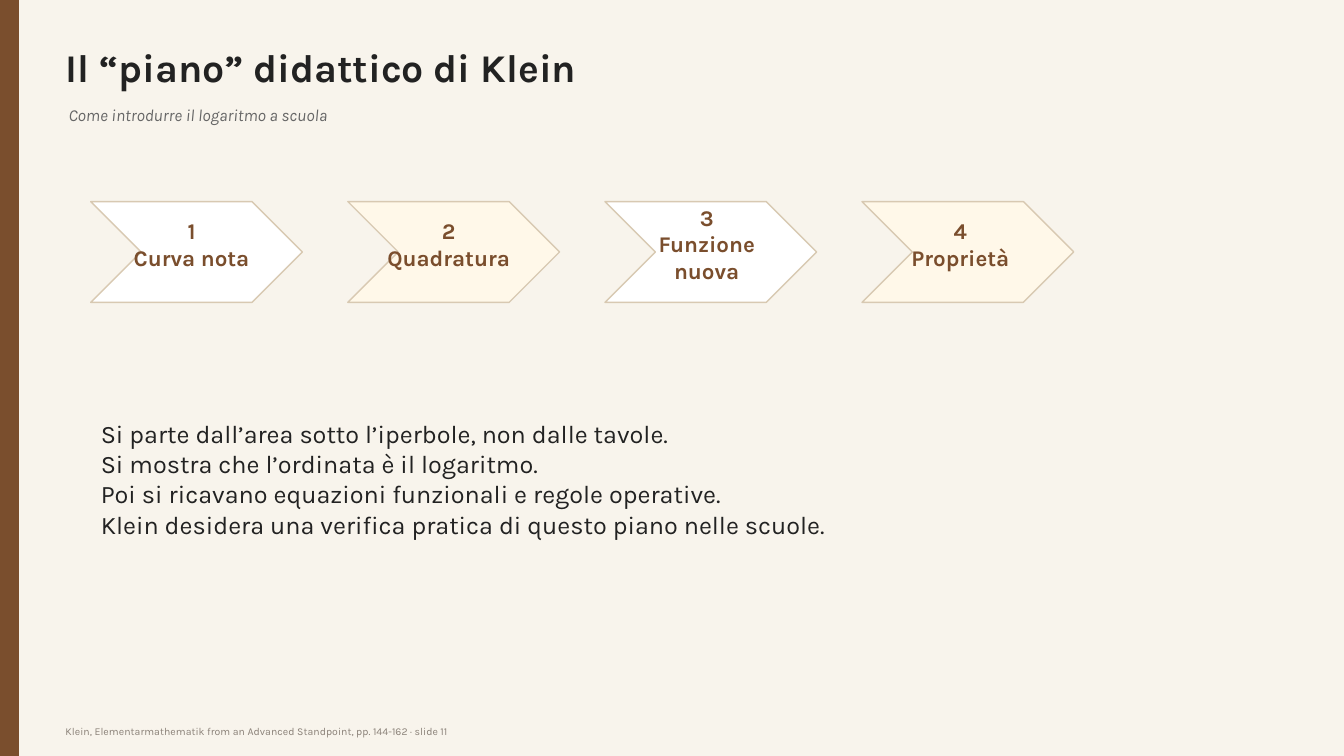
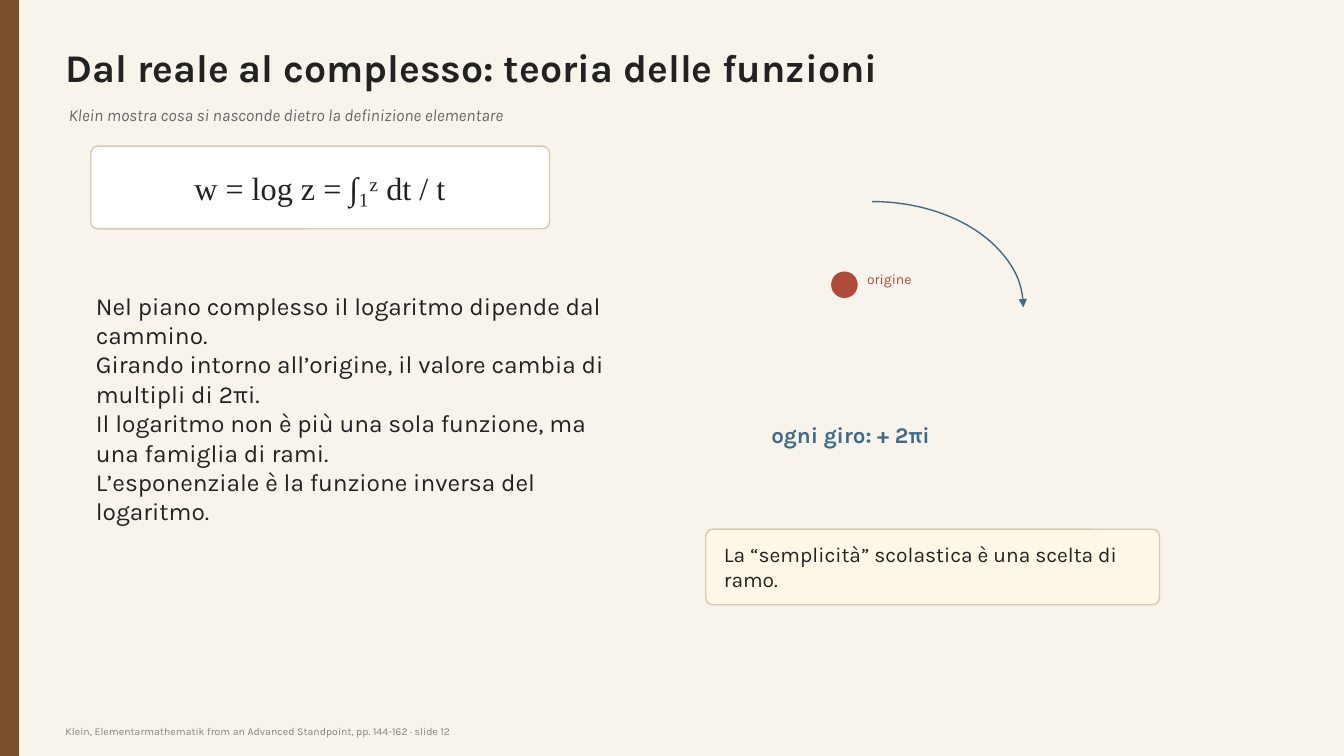
import pptx
import pptx.util
import pptx.dml.color
import pptx.enum.shapes
import pptx.enum.text
import pptx.oxml
import pptx.oxml.ns
from dataclasses import dataclass

SHAPE = pptx.enum.shapes.MSO_SHAPE
ALIGN = pptx.enum.text.PP_ALIGN


@dataclass(frozen=True)
class Theme:
    paper: str = "F8F4EC"
    brown: str = "7A4E2D"
    ink: str = "222222"
    grey: str = "666666"
    muted: str = "8A8178"
    white: str = "FFFFFF"
    cream: str = "FFF8E9"
    border: str = "D8C9B2"
    blue: str = "3E6B89"
    red: str = "B04A3A"
    font: str = "Karla"
    math_font: str = "Times New Roman"
    title: float = 28
    formula: float = 23
    body: float = 18
    body_dense: float = 17.5
    label: float = 16
    note: float = 15
    subtitle: float = 12
    small: float = 10
    footer: float = 7.5


T = Theme()
SLIDE_W, SLIDE_H = 1333, 750
BAND_W = 18
CARD_RADIUS = 7


def px(n):
    return pptx.util.Emu(round(n * 9144))


def rgb(color):
    return pptx.dml.color.RGBColor.from_string(color)


def write(sp, text, size=T.body, color=T.ink, font=T.font, bold=False,
          italic=False, align=ALIGN.LEFT, inset=0):
    tf = sp.text_frame
    tf.auto_size = pptx.enum.text.MSO_AUTO_SIZE.NONE
    tf.word_wrap = True
    tf.vertical_anchor = pptx.enum.text.MSO_ANCHOR.MIDDLE
    tf.margin_left = tf.margin_right = px(inset)
    tf.margin_top = tf.margin_bottom = 0
    for i, line in enumerate(text.split("\n")):
        p = tf.paragraphs[0] if i == 0 else tf.add_paragraph()
        p.alignment = align
        r = p.add_run()
        r.text = line
        r.font.name = font
        r.font.size = pptx.util.Pt(size)
        r.font.bold = bold
        r.font.italic = italic
        r.font.color.rgb = rgb(color)


def add_text(slide, box, text, **fmt):
    sp = slide.shapes.add_textbox(*map(px, box))
    write(sp, text, **fmt)
    return sp


def add_shape(slide, kind, box, fill, line):
    sp = slide.shapes.add_shape(kind, *map(px, box))
    sp.shadow.inherit = False
    if fill:
        sp.fill.solid()
        sp.fill.fore_color.rgb = rgb(fill)
    else:
        sp.fill.background()
    sp.line.color.rgb = rgb(line)
    sp.line.width = pptx.util.Pt(1)
    return sp


def add_card(slide, box, fill, text, **fmt):
    sp = add_shape(slide, SHAPE.ROUNDED_RECTANGLE, box, fill, T.border)
    sp.adjustments[0] = CARD_RADIUS / box[3] if box[3] < 80 else 0.085
    write(sp, text, **fmt)


def add_page(prs, number, title, subtitle):
    slide = prs.slides.add_slide(prs.slide_layouts[5])
    slide.background.fill.solid()
    slide.background.fill.fore_color.rgb = rgb(T.paper)
    add_shape(slide, SHAPE.RECTANGLE, (0, 0, BAND_W, SLIDE_H), T.brown, T.brown)
    sp = slide.shapes.title
    sp.left, sp.top, sp.width, sp.height = map(px, (65, 35, 1060, 62))
    write(sp, title, size=T.title, bold=True)
    add_text(slide, (68, 97, 1020, 33), subtitle,
             size=T.subtitle, color=T.grey, italic=True)
    add_text(slide, (65, 716, 950, 18),
             "Klein, Elementarmathematik from an Advanced Standpoint, "
             f"pp. 144-162 · slide {number}", size=T.footer, color=T.muted)
    return slide


def add_steps(slide, box, steps, gap=45):
    left, top, width, height = box
    step_w = (width - gap * (len(steps) - 1)) // len(steps)
    for i, (name, indent, label_w) in enumerate(steps):
        x = left + i * (step_w + gap)
        fill = T.cream if i % 2 else T.white
        add_shape(slide, SHAPE.CHEVRON, (x, top, step_w, height), fill, T.border)
        add_text(slide, (x + indent, top + 18, label_w, 48), f"{i + 1}\n{name}",
                 size=T.label, color=T.brown, bold=True, align=ALIGN.CENTER)


def add_branch_diagram(slide, box):
    left, top, width, height = box
    arc = add_shape(slide, SHAPE.ARC, box, None, T.blue)
    arc.line._get_or_add_ln().append(pptx.oxml.parse_xml(
        f'<a:tailEnd {pptx.oxml.ns.nsdecls("a")} type="triangle"/>'))
    add_shape(slide, SHAPE.OVAL, (left + 110, top + 70, 25, 25), T.red, T.red)
    add_text(slide, (left + 145, top + 67, 90, 20), "origine",
             size=T.small, color=T.red)
    add_text(slide, (left + 50, top + height + 5, 210, 32), "ogni giro: + 2πi",
             size=T.label, color=T.blue, bold=True)


def build_plan(prs):
    slide = add_page(prs, 11, "Il “piano” didattico di Klein",
                     "Come introdurre il logaritmo a scuola")
    add_steps(slide, (90, 200, 975, 100), [
        ("Curva nota", 25, 150),
        ("Quadratura", 25, 150),
        ("Funzione nuova", 21, 160),
        ("Proprietà", 30, 135),
    ])
    add_text(slide, (100, 400, 1050, 150),
             "Si parte dall’area sotto l’iperbole, non dalle tavole.\n"
             "Si mostra che l’ordinata è il logaritmo.\n"
             "Poi si ricavano equazioni funzionali e regole operative.\n"
             "Klein desidera una verifica pratica di questo piano nelle scuole.")


def build_complex(prs):
    slide = add_page(prs, 12, "Dal reale al complesso: teoria delle funzioni",
                     "Klein mostra cosa si nasconde dietro la definizione elementare")
    add_card(slide, (90, 145, 455, 82), T.white, "w = log z = ∫₁ᶻ dt / t",
             size=T.formula, font=T.math_font, align=ALIGN.CENTER, inset=10)
    add_text(slide, (95, 265, 525, 280),
             "Nel piano complesso il logaritmo dipende dal cammino.\n"
             "Girando intorno all’origine, il valore cambia di multipli di 2πi.\n"
             "Il logaritmo non è più una sola funzione, ma una famiglia di rami.\n"
             "L’esponenziale è la funzione inversa del logaritmo.",
             size=T.body_dense)
    add_branch_diagram(slide, (715, 200, 300, 210))
    add_card(slide, (700, 525, 450, 75), T.cream,
             "La “semplicità” scolastica è una scelta di ramo.",
             size=T.note, inset=16)


def main():
    prs = pptx.Presentation()
    prs.slide_width, prs.slide_height = px(SLIDE_W), px(SLIDE_H)
    build_plan(prs)
    build_complex(prs)
    prs.save("out.pptx")


if __name__ == "__main__":
    main()
